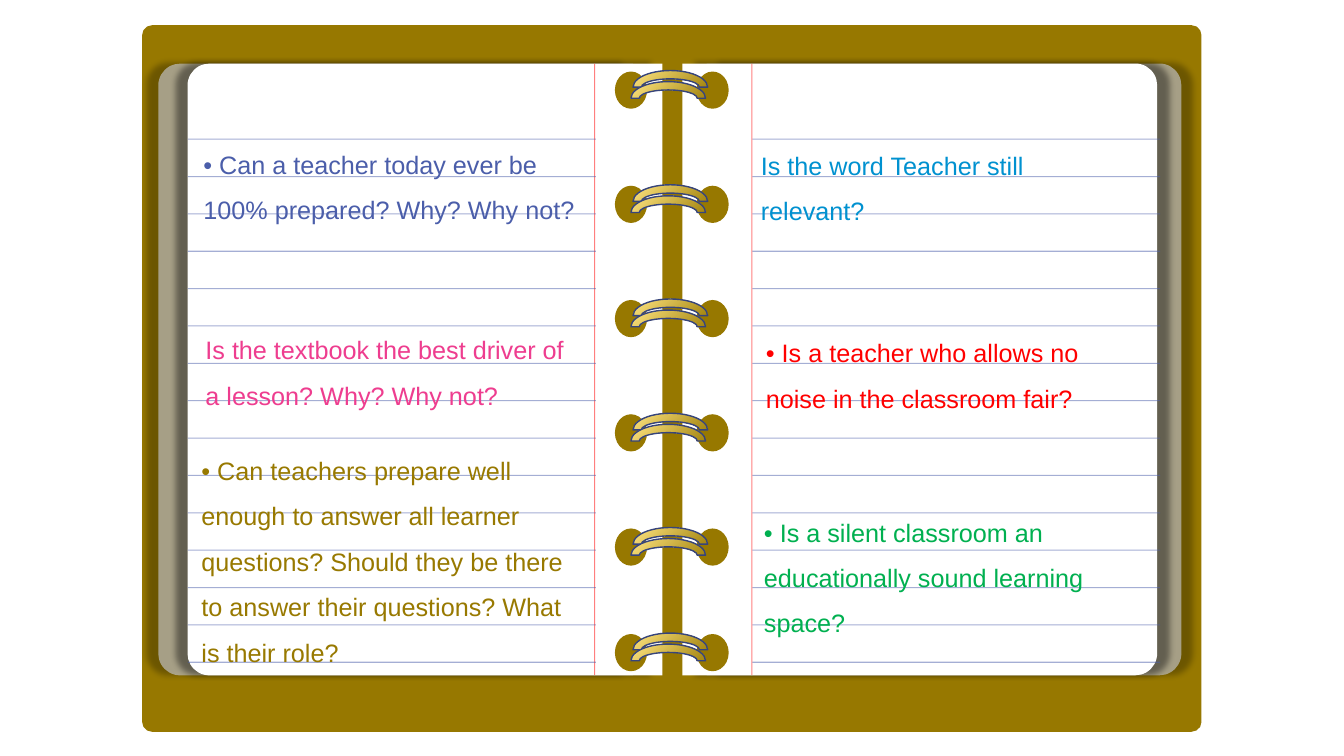
from lxml import etree
from pptx import Presentation
from pptx.dml.color import RGBColor
from pptx.enum.shapes import MSO_CONNECTOR, MSO_SHAPE
from pptx.enum.text import MSO_ANCHOR
from pptx.oxml import parse_xml
from pptx.oxml.ns import nsdecls, qn
from pptx.util import Pt

ROUNDED = MSO_SHAPE.ROUNDED_RECTANGLE
PAGE = MSO_SHAPE.ROUND_2_SAME_RECTANGLE
OVAL = MSO_SHAPE.OVAL
ARC = MSO_SHAPE.BLOCK_ARC
STRAIGHT = MSO_CONNECTOR.STRAIGHT
TOP = MSO_ANCHOR.TOP

COLORS = {
    "cover": "977800", "gold": "FFE582", "ring_edge": "36447C",
    "paper": "FFFFFF", "under_page": "BFBFBF", "shadow": "000000",
    "margin": "FF0000", "rule": "4B5EAA",
    "blue": "4B5EAA", "pink": "EE3D8F", "olive": "987900",
    "sky": "0091D0", "red": "FF0000", "green": "00B050",
}

PAGE_LENGTH, PAGE_WIDTH, PAGE_MIDDLE = 437, 339.1, 263.9
RULE_TOP, RULE_GAP, RULE_COUNT = 99.4, 26.69, 15
RING_TOPS = [51.1 + 81.6 * index for index in range(5)] + [452.9]

QUESTIONS = [
    (138.2, 92.2, 285.8, 69.8, "blue",
     "• Can a teacher today ever be 100% prepared? Why? Why not?"),
    (139.7, 224.6, 285.1, 69.8, "pink",
     "Is the textbook the best driver of a lesson? Why? Why not?"),
    (136.8, 311, 284.4, 170.6, "olive",
     "• Can teachers prepare well enough to answer all learner questions? "
     "Should they be there to answer their questions? What is their role?"),
    (536.4, 92.9, 277.9, 69.8, "sky",
     "Is the word Teacher still relevant?"),
    (540, 226.8, 277.9, 69.8, "red",
     "• Is a teacher who allows no noise in the classroom fair?"),
    (538.6, 355, 280.1, 103, "green",
     "• Is a silent classroom an educationally sound learning space?"),
]


def color(name):
    """Return the named colour."""
    return RGBColor.from_string(COLORS[name])


def set_alpha(properties, percent):
    """Make the solid colour inside an element partly transparent."""
    solid_color = properties.find(".//" + qn("a:srgbClr"))
    etree.SubElement(solid_color, qn("a:alpha"), val=str(percent * 1000))


def add_filled(slide, kind, left, top, width, height, fill):
    """Add a preset shape with a solid fill and no outline."""
    shape = slide.shapes.add_shape(kind, Pt(left), Pt(top), Pt(width), Pt(height))
    shape.shadow.inherit = False
    shape.fill.solid()
    shape.fill.fore_color.rgb = color(fill)
    shape.line.fill.background()
    return shape


def add_page(slide, center, rotation, fill, distance):
    """Add a page with rounded outer corners and a shadow on its outer side."""
    page = add_filled(slide, PAGE, center - PAGE_LENGTH / 2,
                      PAGE_MIDDLE - PAGE_WIDTH / 2,
                      PAGE_LENGTH, PAGE_WIDTH, fill)
    page.adjustments[0] = 0.046
    page.adjustments[1] = 0
    page.rotation = rotation
    direction = 180 if rotation == 270 else 0
    effects = page._element.spPr.find(qn("a:effectLst"))
    effects.append(parse_xml(
        f'<a:outerShdw {nsdecls("a")} blurRad="{Pt(4)}" dist="{Pt(distance)}" '
        f'dir="{direction * 60000}" algn="ctr" rotWithShape="0">'
        f'<a:srgbClr val="{COLORS["shadow"]}"><a:alpha val="40000"/></a:srgbClr>'
        '</a:outerShdw>'))
    return page


def add_under_page(slide, center, rotation):
    """Add the translucent page that shows beneath the top one."""
    page = add_page(slide, center, rotation, "under_page", 8)
    set_alpha(page._element.spPr.find(qn("a:solidFill")), 70)


def add_line(slide, start_x, start_y, end_x, end_y, stroke):
    """Add a thin half-transparent line."""
    line = slide.shapes.add_connector(
        STRAIGHT, Pt(start_x), Pt(start_y), Pt(end_x), Pt(end_y))
    line.line.color.rgb = color(stroke)
    line.line.width = Pt(0.75)
    properties = line._element.spPr
    set_alpha(properties, 50)
    etree.SubElement(properties, qn("a:effectLst"))


def add_ruling(slide, margin_x, left, right):
    """Add the margin line and the writing lines of a page."""
    add_line(slide, margin_x, 45.6, margin_x, 482, "margin")
    for index in range(RULE_COUNT):
        y = RULE_TOP + RULE_GAP * index
        add_line(slide, left, y, right, y, "rule")


def add_arc(slide, left, top):
    """Add one golden wire of a binder ring."""
    arc = add_filled(slide, ARC, left, top, 53.3, 23.8, "cover")
    arc.line.color.rgb = color("ring_edge")
    arc.line.width = Pt(1)
    properties = arc._element.spPr
    stops = "".join(
        f'<a:gs pos="{position * 1000}"><a:srgbClr val="{COLORS[name]}"/></a:gs>'
        for position, name in [(0, "cover"), (3, "cover"), (100, "gold")])
    gradient = parse_xml(
        f'<a:gradFill {nsdecls("a")} rotWithShape="1"><a:gsLst>{stops}</a:gsLst>'
        '<a:path path="circle"><a:fillToRect l="100000" t="100000"/></a:path>'
        '<a:tileRect r="-100000" b="-100000"/></a:gradFill>')
    properties.replace(properties.find(qn("a:solidFill")), gradient)


def add_ring(slide, top):
    """Add two punched holes joined by a double wire."""
    for left in (439.2, 497.5):
        add_filled(slide, OVAL, left, top, 23, 26.6, "cover")
    add_arc(slide, 452.2, top - 0.7)
    add_arc(slide, 450.7, top + 7.2)


def add_question(slide, left, top, width, height, text_color, text):
    """Add one question as wrapped, widely spaced text."""
    box = slide.shapes.add_textbox(Pt(left), Pt(top), Pt(width), Pt(height))
    frame = box.text_frame
    frame.word_wrap = True
    frame.vertical_anchor = TOP
    paragraph = frame.paragraphs[0]
    paragraph.text = text
    paragraph.line_spacing = 1.5
    paragraph.font.name = "Arial"
    paragraph.font.size = Pt(18)
    paragraph.font.color.rgb = color(text_color)


def main():
    """Build the open notebook and save it."""
    presentation = Presentation()
    presentation.slide_width = Pt(960)
    presentation.slide_height = Pt(540)
    slide = presentation.slides.add_slide(presentation.slide_layouts[6])

    cover = add_filled(slide, ROUNDED, 101.5, 18, 756.7, 504.7, "cover")
    cover.adjustments[0] = 0.014
    add_under_page(slide, 282.6, 270)
    add_page(slide, 303.5, 270, "paper", 8)
    add_under_page(slide, 674.3, 90)
    add_ruling(slide, 424.8, 134.3, 425.6)
    add_page(slide, 657, 90, "paper", 9)
    add_ruling(slide, 537.1, 537.5, 828.7)

    for top in RING_TOPS:
        add_ring(slide, top)
    for question in QUESTIONS:
        add_question(slide, *question)

    presentation.save("out.pptx")


if __name__ == "__main__":
    main()
